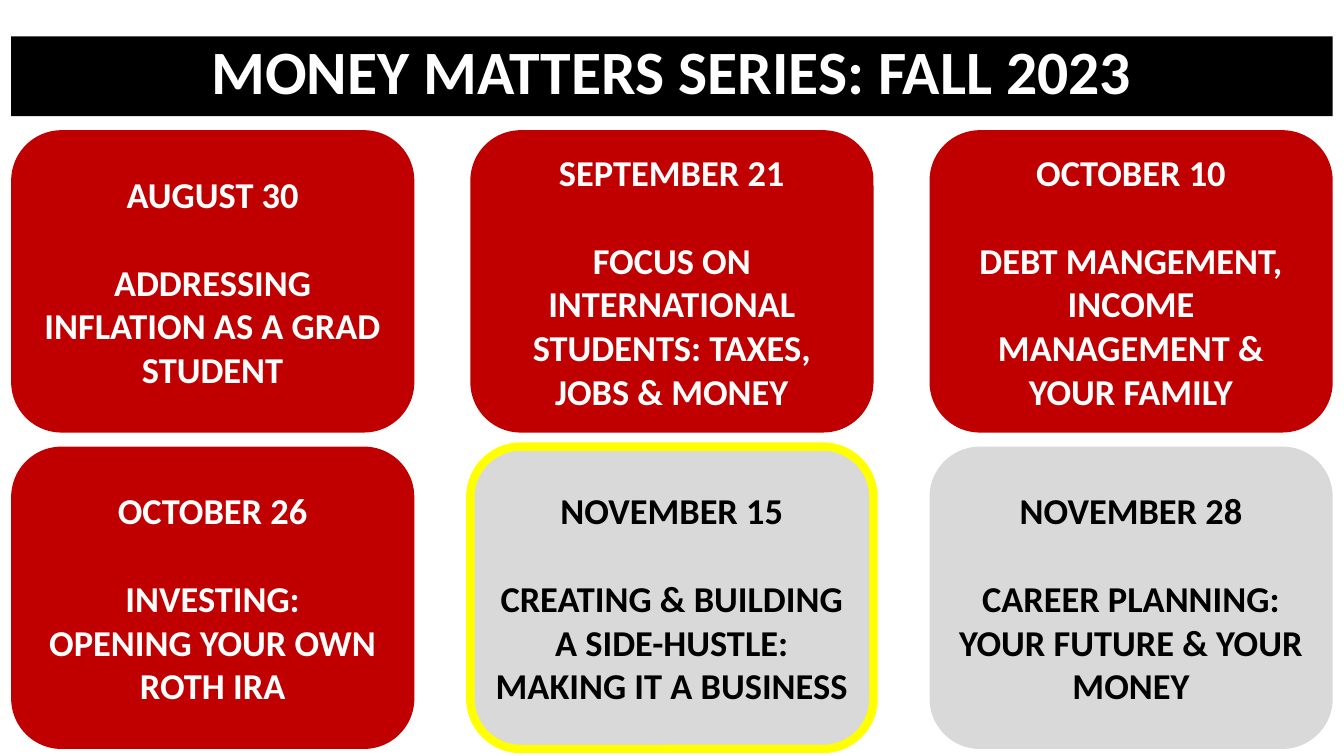
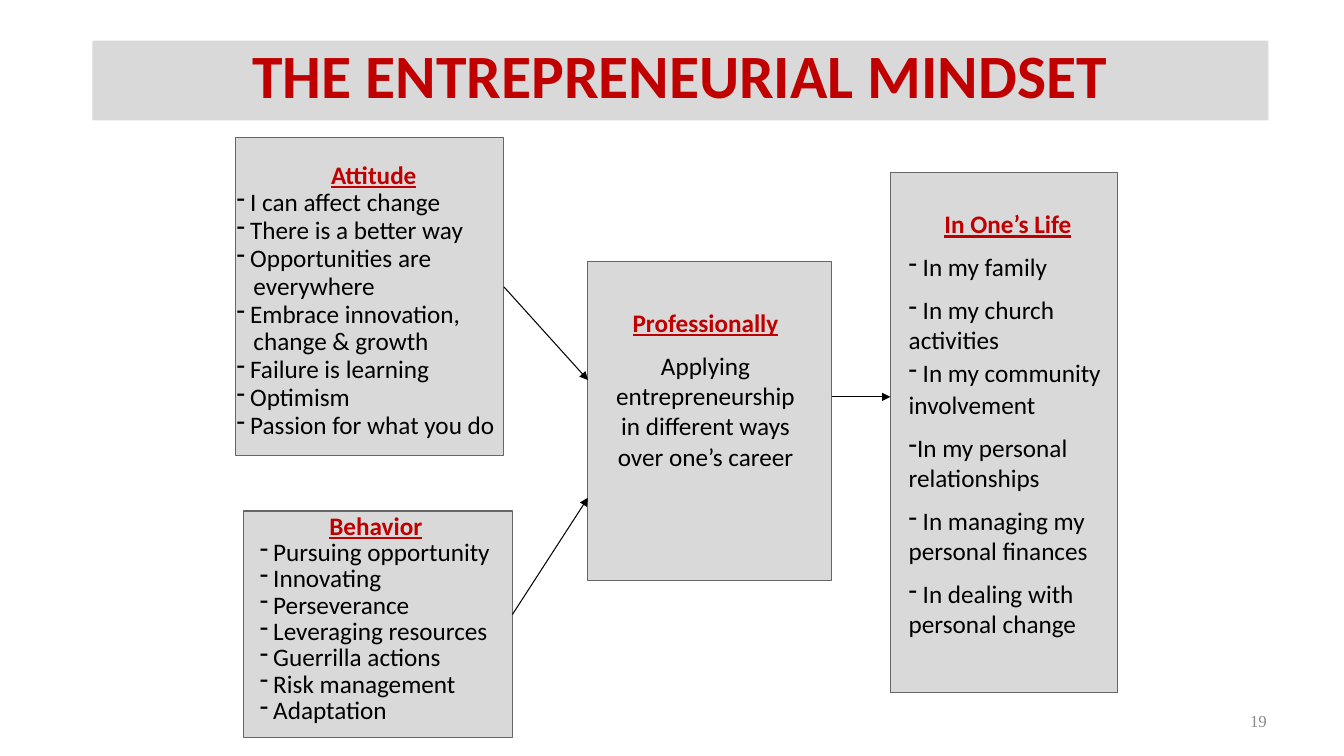
from lxml.etree import SubElement
from pptx import Presentation
from pptx.dml.color import RGBColor
from pptx.enum.shapes import MSO_CONNECTOR, MSO_SHAPE
from pptx.enum.text import MSO_ANCHOR, MSO_AUTO_SIZE, PP_ALIGN
from pptx.oxml.ns import qn
from pptx.util import Pt

BLACK, WHITE, RED, GRAY = "000000", "FFFFFF", "C00000", "D9D9D9"
YELLOW, BORDER, NUMBER_GRAY = "FFFF00", "666666", "898989"

SESSIONS = [
    ("AUGUST 30", "ADDRESSING INFLATION AS A GRAD STUDENT", "past"),
    ("SEPTEMBER 21", "FOCUS ON INTERNATIONAL STUDENTS: TAXES, JOBS & MONEY", "past"),
    ("OCTOBER 10", "DEBT MANGEMENT, INCOME MANAGEMENT & YOUR FAMILY", "past"),
    ("OCTOBER 26", "INVESTING:\vOPENING YOUR OWN ROTH IRA", "past"),
    ("NOVEMBER 15", "CREATING & BUILDING A SIDE-HUSTLE: MAKING IT A BUSINESS", "current"),
    ("NOVEMBER 28", "CAREER PLANNING: YOUR FUTURE & YOUR MONEY", "future"),
]
SESSION_STYLES = {
    "past": (RED, WHITE, None),
    "current": (GRAY, BLACK, YELLOW),
    "future": (GRAY, BLACK, None),
}

TIGHT, WIDE = 1.5, 9
HANG = 9.6
PANELS = [
    {"heading": "Attitude", "panel": (168, 98, 192, 227.5), "text": (162, 110, 210, 215),
     "heading_spacing": 1, "spacing": 0.85, "hang": HANG, "items": [
         ("bullet", TIGHT, "I can affect change"),
         ("bullet", TIGHT, "There is a better way"),
         ("bullet", TIGHT, "Opportunities are"),
         ("more", TIGHT, "everywhere"),
         ("bullet", TIGHT, "Embrace innovation,"),
         ("more", TIGHT, "change & growth"),
         ("bullet", TIGHT, "Failure is learning"),
         ("bullet", TIGHT, "Optimism"),
         ("bullet", TIGHT, "Passion for what you do")]},
    {"heading": "Behavior", "panel": (174, 365, 192, 162), "text": (178.5, 365, 180, 162),
     "heading_spacing": 0.8, "spacing": 0.8, "hang": HANG, "items": [
         ("bullet", TIGHT, item) for item in (
             "Pursuing opportunity", "Innovating", "Perseverance",
             "Leveraging resources", "Guerrilla actions", "Risk management",
             "Adaptation")]},
    {"heading": "Professionally", "panel": (420, 187, 174, 228), "text": (432, 216, 144, 127),
     "heading_spacing": 1, "spacing": 1, "hang": 0, "items": [
         ("center", WIDE, "Applying entrepreneurship in different ways over one’s career")]},
    {"heading": "In One’s Life", "panel": (636, 123, 162, 372), "text": (642, 145.5, 156, 325.5),
     "heading_spacing": 1, "spacing": 1, "hang": 0, "items": [
         ("bullet", WIDE, " In my family"),
         ("bullet", WIDE, " In my church activities"),
         ("bullet", TIGHT, " In my community"),
         ("more", TIGHT, "involvement"),
         ("bullet", WIDE, "In my personal relationships"),
         ("bullet", WIDE, " In managing my personal finances"),
         ("bullet", WIDE, " In dealing with personal change")]},
]
ARROWS = [
    (360, 205, 420, 271.5),
    (366, 439, 420, 355.5),
    (594, 283.5, 636, 283.5),
]


def color(value):
    return RGBColor.from_string(value)


def points(lengths):
    return [Pt(length) for length in lengths]


def set_fill(shape, value):
    shape.fill.solid()
    shape.fill.fore_color.rgb = color(value)


def write(paragraph, text, size, text_color, align=PP_ALIGN.CENTER, font="Calibri",
          bold=False, underline=False, **spacing):
    for name, value in {"alignment": align, **spacing}.items():
        setattr(paragraph, name, value)
    paragraph.text = text
    for run in paragraph.runs:
        for name, value in {"name": font, "size": Pt(size), "bold": bold,
                            "underline": underline}.items():
            setattr(run.font, name, value)
        run.font.color.rgb = color(text_color)


def add_panel(slide, kind, box, fill, line=None, line_width=0.75):
    shape = slide.shapes.add_shape(kind, *points(box))
    shape.shadow.inherit = False
    set_fill(shape, fill)
    if line:
        shape.line.color.rgb = color(line)
        shape.line.width = Pt(line_width)
    else:
        shape.line.fill.background()
    return shape


def add_text_frame(slide, box):
    frame = slide.shapes.add_textbox(*points(box)).text_frame
    frame.word_wrap = True
    return frame


def add_titled_slide(presentation, text, box, fill, text_color):
    slide = presentation.slides.add_slide(presentation.slide_layouts[5])
    title = slide.shapes.title
    title.left, title.top, title.width, title.height = points(box)
    set_fill(title, fill)
    frame = title.text_frame
    frame.auto_size = MSO_AUTO_SIZE.NONE
    frame.vertical_anchor = MSO_ANCHOR.TOP
    write(frame.paragraphs[0], text, 44, text_color, bold=True,
          line_spacing=0.9, space_before=Pt(0))
    return slide


def add_session(slide, index, date, topic, state):
    row, column = divmod(index, 3)
    fill, text_color, outline = SESSION_STYLES[state]
    box = (8 + column * 328, 93 + row * 226, 288, 216)
    shape = add_panel(slide, MSO_SHAPE.ROUNDED_RECTANGLE, box, fill, outline, 6)
    frame = shape.text_frame
    frame.vertical_anchor = MSO_ANCHOR.MIDDLE
    write(frame.paragraphs[0], date, 26, text_color, bold=True)
    write(frame.add_paragraph(), topic, 26, text_color, bold=True, space_before=Pt(31.5))


def set_bullet(paragraph, kind, hang):
    properties = paragraph._p.get_or_add_pPr()
    if kind == "bullet":
        properties.set("marL", str(Pt(hang)))
        properties.set("indent", str(-Pt(hang)))
        SubElement(properties, qn("a:buChar"), char="-")
    elif hang:
        properties.set("marL", str(Pt(12)))


def add_mindset_panel(slide, heading, panel, text, heading_spacing, spacing, hang, items):
    add_panel(slide, MSO_SHAPE.RECTANGLE, panel, GRAY, BORDER)
    frame = add_text_frame(slide, text)
    write(frame.paragraphs[0], heading, 18, RED, bold=True, underline=True,
          line_spacing=heading_spacing)
    for kind, gap, item in items:
        paragraph = frame.add_paragraph()
        set_bullet(paragraph, kind, hang)
        align = PP_ALIGN.CENTER if kind == "center" else PP_ALIGN.LEFT
        write(paragraph, item, 18, BLACK, align, line_spacing=spacing, space_before=Pt(gap))


def add_arrow(slide, ends):
    connector = slide.shapes.add_connector(MSO_CONNECTOR.STRAIGHT, *points(ends))
    connector.line.color.rgb = color(BLACK)
    connector.line.width = Pt(0.75)
    SubElement(connector.line._get_or_add_ln(), qn("a:tailEnd"), type="triangle")
    SubElement(connector._element.spPr, qn("a:effectLst"))


def main():
    presentation = Presentation()
    presentation.slide_width, presentation.slide_height = Pt(960), Pt(540)

    series = add_titled_slide(presentation, "MONEY MATTERS SERIES: FALL 2023",
                              (8, 26, 944, 57), BLACK, WHITE)
    for index, session in enumerate(SESSIONS):
        add_session(series, index, *session)

    mindset = add_titled_slide(presentation, "THE ENTREPRENEURIAL MINDSET",
                               (66, 29, 840, 57), GRAY, RED)
    for panel in PANELS:
        add_mindset_panel(mindset, **panel)
    for ends in ARROWS:
        add_arrow(mindset, ends)
    frame = add_text_frame(mindset, (688, 500.5, 224, 29))
    frame.vertical_anchor = MSO_ANCHOR.MIDDLE
    write(frame.paragraphs[0], "19", 12, NUMBER_GRAY, PP_ALIGN.RIGHT, "Times New Roman")

    presentation.save("out.pptx")


if __name__ == "__main__":
    main()
